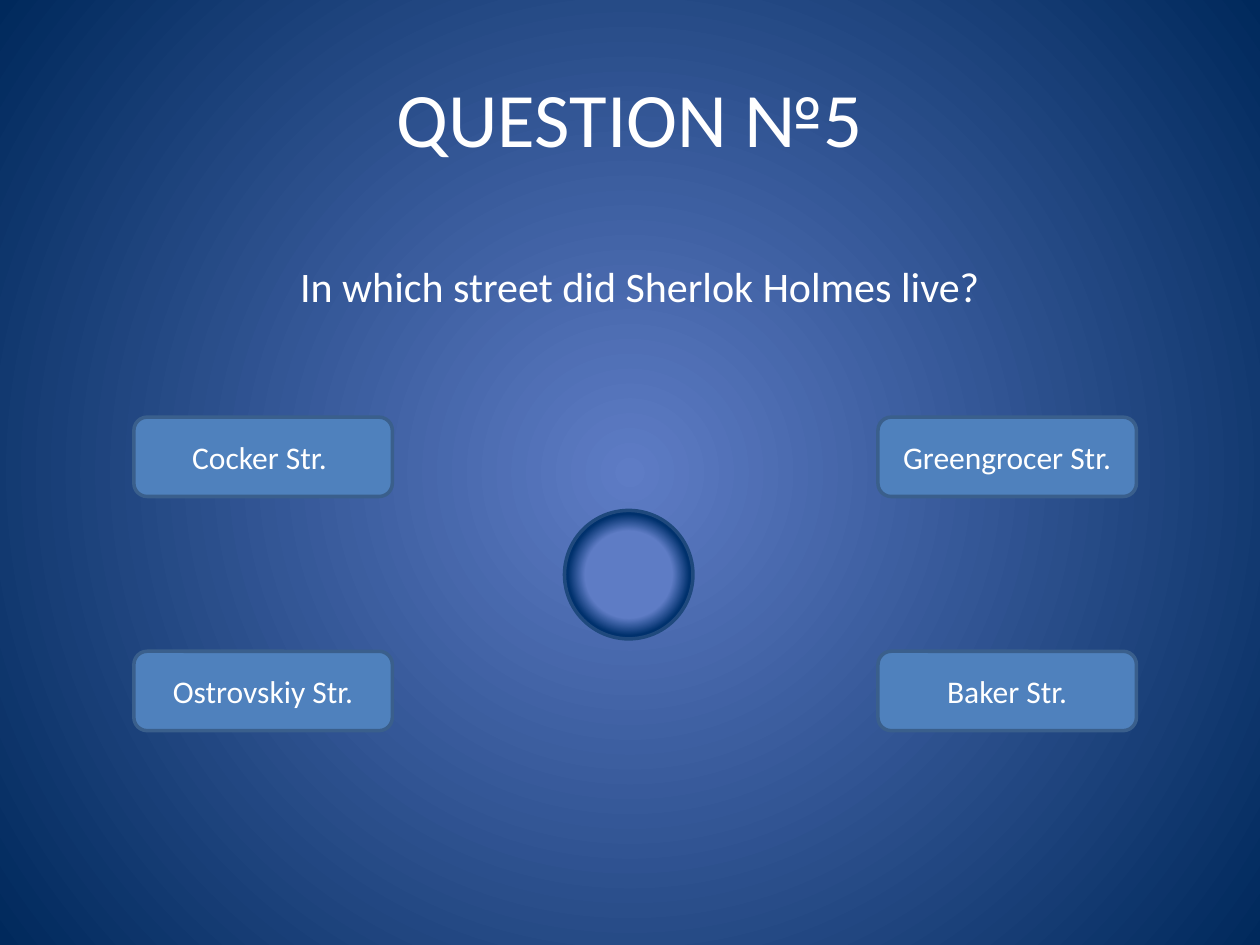
from lxml.etree import SubElement
from pptx import Presentation
from pptx.dml.color import RGBColor
from pptx.enum.shapes import MSO_SHAPE
from pptx.enum.text import MSO_ANCHOR, MSO_AUTO_SIZE, PP_ALIGN
from pptx.oxml.ns import qn
from pptx.util import Cm, Pt

FONT = "Calibri"
WHITE = "FFFFFF"
GLOW = "5E7CC5"
BUTTON_SIZE = (5.21, 1.6)
COLUMNS = (2.7, 17.7)
ROWS = (8.41, 13.13)
ANSWERS = (("Cocker Str. ", "Greengrocer Str."), ("Ostrovskiy Str.", "Baker Str."))


def color(value):
    return RGBColor.from_string(value)


def write_text(shape, text, size=18, font_color=WHITE, anchor=MSO_ANCHOR.MIDDLE):
    frame = shape.text_frame
    frame.word_wrap = True
    frame.vertical_anchor = anchor
    paragraph = frame.paragraphs[0]
    paragraph.alignment = PP_ALIGN.CENTER
    run = paragraph.add_run()
    run.text = text
    run.font.name = FONT
    run.font.size = Pt(size)
    run.font.color.rgb = color(font_color)


def fill_radial(fill, owner, stops):
    fill.gradient()
    for gradient_stop, (position, value) in zip(fill.gradient_stops, stops):
        gradient_stop.position = position
        gradient_stop.color.rgb = color(value)
    gradient = owner.element.xpath(".//a:gradFill")[0]
    gradient.remove(gradient.find(qn("a:lin")))
    circle = SubElement(gradient, qn("a:path"), path="circle")
    SubElement(circle, qn("a:fillToRect"), l="50000", t="50000", r="50000", b="50000")


def add_outlined_shape(slide, kind, left, top, width, height, line_color):
    shape = slide.shapes.add_shape(kind, Cm(left), Cm(top), Cm(width), Cm(height))
    shape.shadow.inherit = False
    shape.line.color.rgb = color(line_color)
    shape.line.width = Pt(2)
    return shape


def add_title(slide, text):
    title = slide.shapes.title
    title.left, title.top, title.width, title.height = Cm(1.27), Cm(0.76), Cm(22.86), Cm(3.18)
    write_text(title, text, size=44)


def add_question(slide, text):
    box = slide.shapes.add_textbox(Cm(1.9), Cm(5.13), Cm(22), Cm(1.27))
    write_text(box, text, size=24, anchor=MSO_ANCHOR.TOP)
    box.text_frame.auto_size = MSO_AUTO_SIZE.SHAPE_TO_FIT_TEXT


def add_answer(slide, text, left, top):
    button = add_outlined_shape(
        slide, MSO_SHAPE.ROUNDED_RECTANGLE, left, top, *BUTTON_SIZE, "3A5F8C"
    )
    button.fill.solid()
    button.fill.fore_color.rgb = color("4F81BD")
    write_text(button, text)


def add_orb(slide):
    orb = add_outlined_shape(slide, MSO_SHAPE.OVAL, 11.38, 10.29, 2.59, 2.59, "1F497D")
    fill_radial(orb.fill, orb, ((0.48, GLOW), (0.67, "00316D")))


def main():
    presentation = Presentation()
    presentation.slide_width = Cm(25.4)
    presentation.slide_height = Cm(19.05)
    slide = presentation.slides.add_slide(presentation.slide_layouts[5])
    fill_radial(slide.background.fill, slide, ((0, GLOW), (1, "00295C")))
    add_title(slide, "QUESTION №5")
    add_question(slide, "In which street did Sherlok Holmes live?")
    for top, answers in zip(ROWS, ANSWERS):
        for left, answer in zip(COLUMNS, answers):
            add_answer(slide, answer, left, top)
    add_orb(slide)
    presentation.save("out.pptx")


if __name__ == "__main__":
    main()
